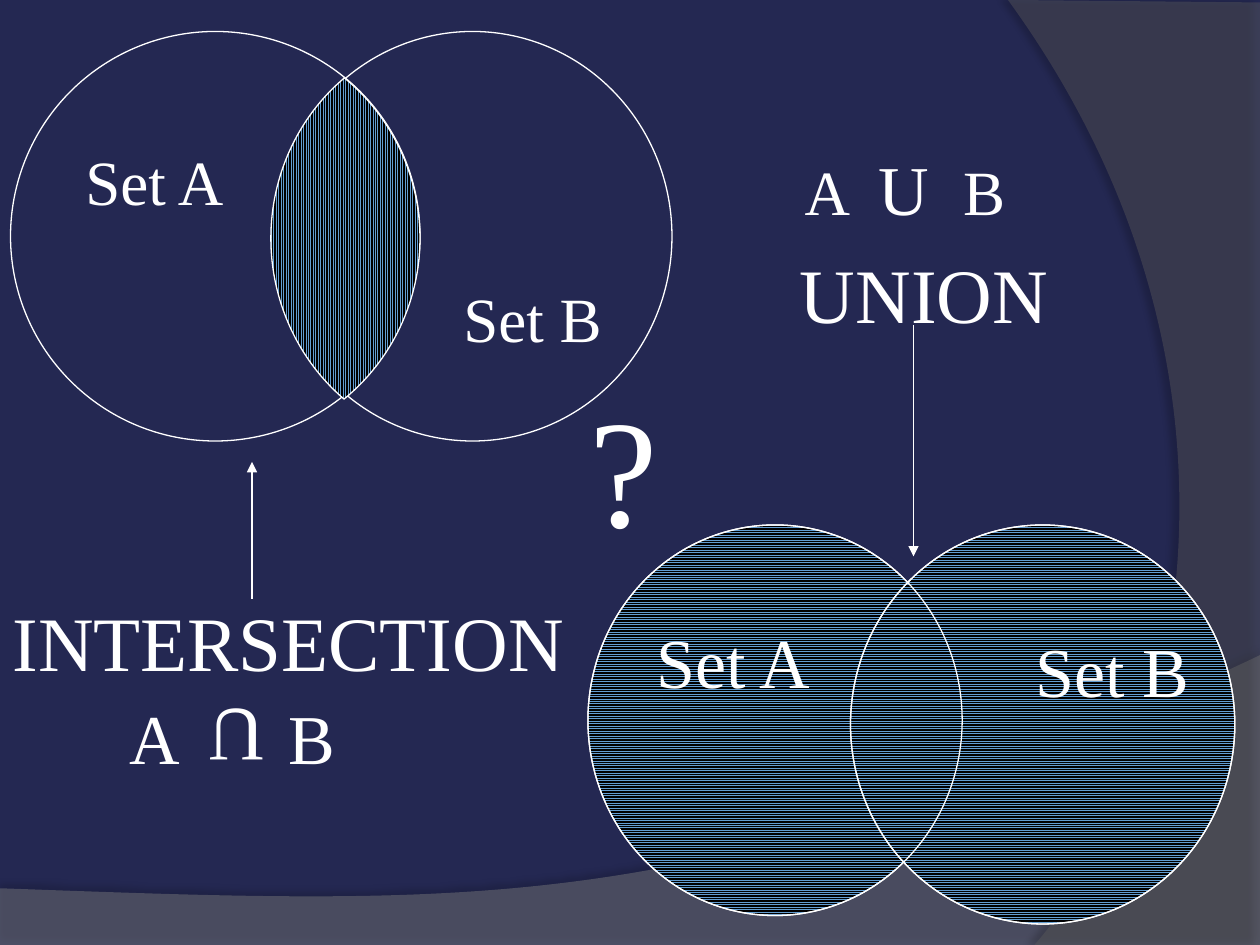
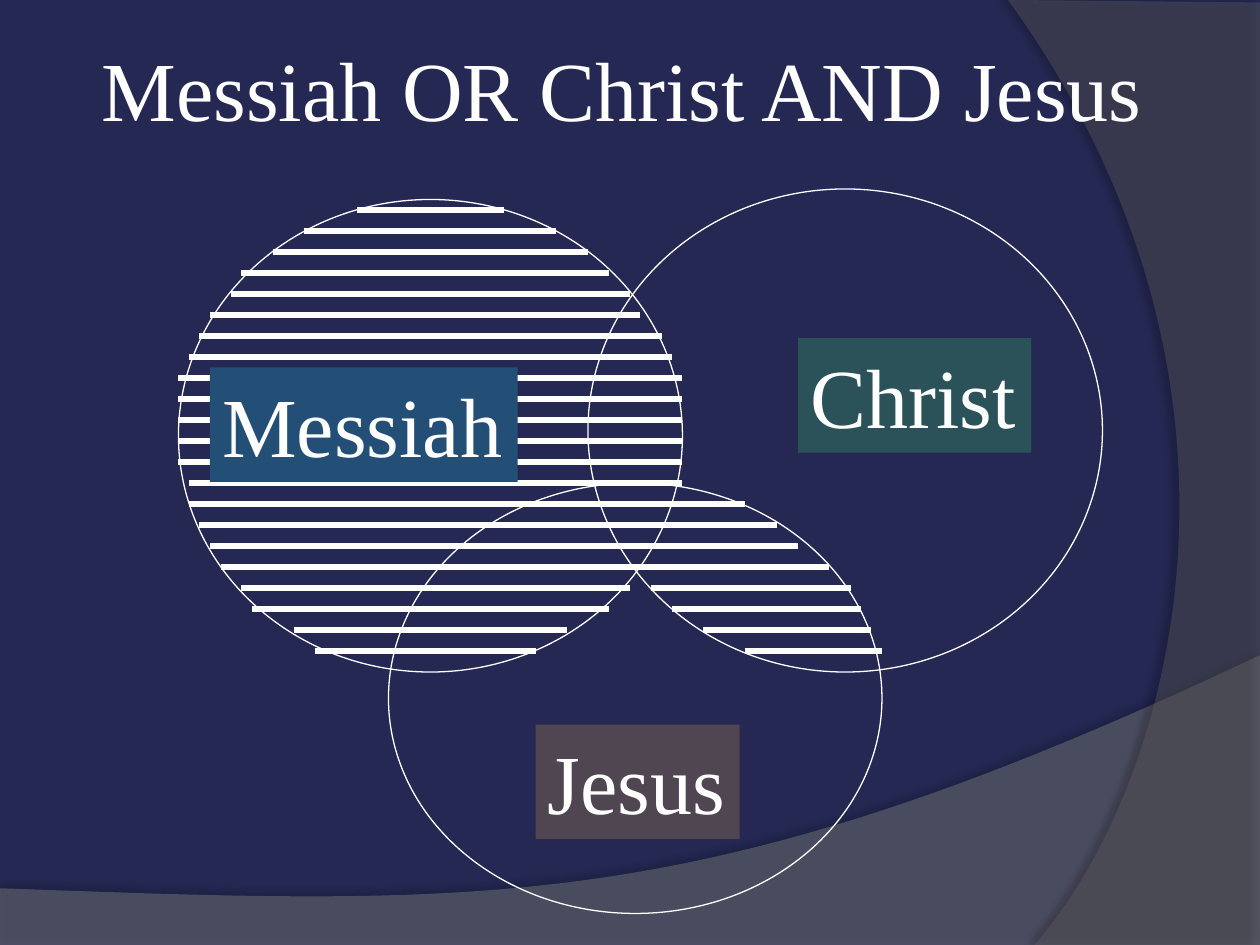
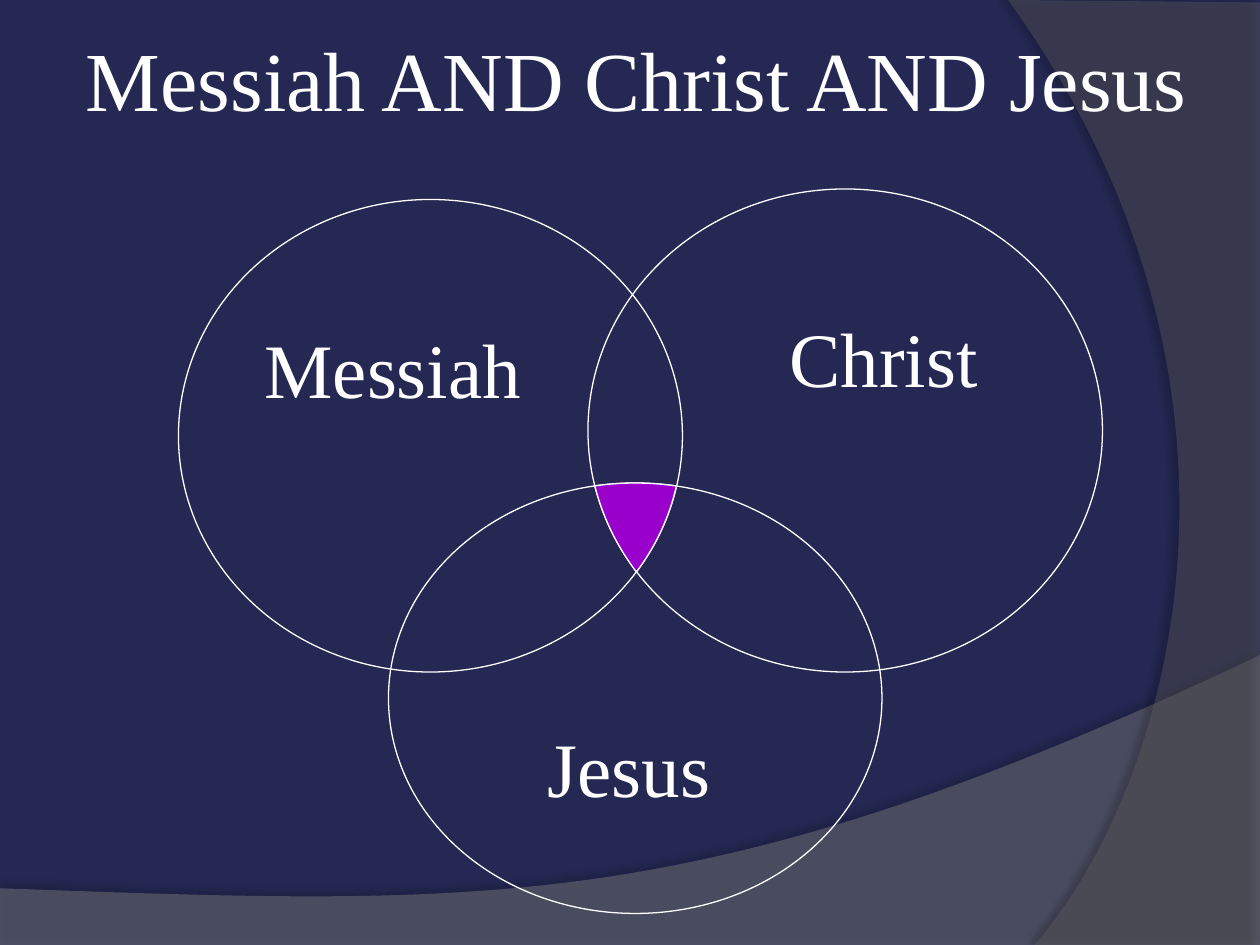
from dataclasses import dataclass
from math import cos, radians, sin, tan
from typing import NamedTuple

from lxml.etree import SubElement
from pptx import Presentation
from pptx.dml.color import RGBColor
from pptx.enum.dml import MSO_PATTERN
from pptx.enum.shapes import MSO_CONNECTOR, MSO_SHAPE
from pptx.enum.text import MSO_ANCHOR, MSO_AUTO_SIZE, PP_ALIGN
from pptx.oxml.ns import qn
from pptx.util import Inches, Pt

STRAIGHT = MSO_CONNECTOR.STRAIGHT
ELLIPSE, RECT = MSO_SHAPE.OVAL, MSO_SHAPE.RECTANGLE
ROWS, COLS = MSO_PATTERN.LIGHT_HORIZONTAL, MSO_PATTERN.LIGHT_VERTICAL
LEFT, CENTER = PP_ALIGN.LEFT, PP_ALIGN.CENTER
TOP, MIDDLE = MSO_ANCHOR.TOP, MSO_ANCHOR.MIDDLE
GROW = MSO_AUTO_SIZE.SHAPE_TO_FIT_TEXT

# The grid has twelve cells to the inch.
CELL = Inches(1) // 12
WIDE, HIGH = 120, 90

Point = tuple[float, float]


@dataclass(frozen=True)
class Theme:
    font: str = "Times New Roman"
    back: RGBColor = RGBColor.from_string("242852")
    ink: RGBColor = RGBColor.from_string("FFFFFF")
    hatch: RGBColor = RGBColor.from_string("629DD1")
    dark: RGBColor = RGBColor.from_string("000000")
    floor: RGBColor = RGBColor.from_string("7F7F7F")
    side: RGBColor = RGBColor.from_string("5E5E5E")
    blue: RGBColor = RGBColor.from_string("234F77")
    green: RGBColor = RGBColor.from_string("2B5259")
    mauve: RGBColor = RGBColor.from_string("504652")
    core: RGBColor = RGBColor.from_string("9900CC")
    small: int = 36
    medium: int = 40
    large: int = 44
    title: int = 48
    huge: int = 88
    thin: float = 0.75
    thick: float = 3


THEME = Theme()


class Curve(NamedTuple):
    start: Point
    first: Point
    second: Point
    end: Point


class Oval(NamedTuple):
    left: float
    top: float
    width: float
    height: float

    def arc(self, start: float, end: float) -> Curve:
        """Cubic curve along the border between two angles in degrees."""
        a, b = radians(start), radians(end)
        pull = 4 / 3 * tan((b - a) / 4)
        spots = ((cos(a), sin(a)),
                 (cos(a) - pull * sin(a), sin(a) + pull * cos(a)),
                 (cos(b) + pull * sin(b), sin(b) - pull * cos(b)),
                 (cos(b), sin(b)))
        return Curve(*((self.left + self.width / 2 * (1 + x),
                        self.top + self.height / 2 * (1 + y)) for x, y in spots))


class Band(NamedTuple):
    curve: Curve
    corners: list[Point]
    color: RGBColor
    alpha: int
    shade: int
    gap: float
    angle: int


@dataclass(frozen=True)
class Label:
    text: str
    left: float
    top: float
    width: float
    height: float
    size: int = THEME.large
    fill: RGBColor | None = None
    wrap: bool = True
    align: PP_ALIGN = LEFT
    anchor: MSO_ANCHOR = TOP
    turn: int = 0


BANDS = [
    Band(Curve((WIDE, 62.4), (67.08, 87.48), (46.92, 86.28), (0, 84.6)),
         [(0, HIGH), (WIDE, HIGH)], THEME.floor, 45, 35, 3.5, 270),
    Band(Curve((98.52, HIGH), (112.2, 74.28), (122.16, 36), (96, 0)),
         [(WIDE, 0.24), (WIDE, HIGH)], THEME.side, 40, 45, 4, 180),
]

MEET = [Oval(26, 3, 38, 39), Oval(1, 3, 39, 39)]
JOIN = [Oval(56, 50, 35.64, 37.2), Oval(81, 50, 36.6, 38)]
TERMS = MESSIAH, CHRIST, JESUS = [
    Oval(17, 19, 48, 45), Oval(56, 18, 49, 46), Oval(37, 46, 47, 41)]

BULGE_A, BULGE_B = Oval(1, 3, 39, 39.4), Oval(25.8, 3, 38, 39.4)
LENS = [BULGE_A.arc(-51, 0), BULGE_A.arc(0, 51),
        BULGE_B.arc(129, 180), BULGE_B.arc(180, 231)]
CORE = [JESUS.arc(260.8, 270), JESUS.arc(270, 279.6),
        MESSIAH.arc(12.4, 35.2), CHRIST.arc(144.2, 166.7)]

JOIN_TEXT = [
    Label("Set A", 61.15, 58.3, 17.4, 9.2, THEME.medium, None, False, CENTER, MIDDLE),
    Label("Set B", 97.45, 59.2, 17, 9.2, THEME.medium, None, False, CENTER, MIDDLE),
]
SET_TEXT = [
    Label("UNION", 75, 22.9, 29, 10),
    Label("INTERSECTION", 0, 56, 56, 10),
    Label("?", 55, 35, 11, 19, THEME.huge),
    Label("Set A", 6.95, 13, 18, 8.4, THEME.small),
    Label("Set B", 42.95, 26, 16, 8.4, THEME.small),
    Label("U", 18.4, 65.5, 8, 10, turn=180),
    Label("A", 11.2, 65.55, 6.7, 9.2, THEME.medium),
    Label("B", 26.3, 65.55, 10.7, 9.2, THEME.medium),
]
OR_TEXT = [
    Label("Messiah", 20, 35, 29.3, 10.9, THEME.title, THEME.blue, False),
    Label("Christ", 76, 32.2, 22.2, 10.9, THEME.title, THEME.green, False),
    Label("Jesus", 51, 69, 19.45, 10.9, THEME.title, THEME.mauve, False),
    Label("Messiah OR Christ AND Jesus", 8.5, 3, 103, 10.9, THEME.title),
]
AND_TEXT = [
    Label("Messiah", 24, 30, 28, 10),
    Label("Christ", 74, 29, 25, 10),
    Label("Jesus", 51, 68, 19, 10),
    Label("Messiah AND Christ AND Jesus", 7, 2, 108.2, 10.9, THEME.title, wrap=False),
]

# First and last column of each stripe, one stripe every second row.
RIGHT_TOP, RIGHT = 48, [(57, 71), (58, 74), (59, 76), (60, 79),
                        (62, 81), (64, 82), (67, 83), (71, 84)]
LEFT_TOP, DISC = 20, [
    (34, 48), (29, 53), (26, 56), (23, 58), (22, 60), (20, 61), (19, 63), (18, 64),
    *[(17, 65)] * 5,
    (18, 65), (18, 64), (19, 63), (20, 62), (21, 61), (23, 60), (24, 58), (28, 54),
    (30, 51)]


def grid(*cells: float) -> list[int]:
    return [round(cell * CELL) for cell in cells]


def paint(shape, color=None, pattern=None, edge: bool = True) -> None:
    shape.shadow.inherit = False
    fill = shape.fill
    if pattern is not None:
        fill.patterned()
        fill.pattern = pattern
        fill.fore_color.rgb, fill.back_color.rgb = THEME.hatch, THEME.dark
    elif color is not None:
        fill.solid()
        fill.fore_color.rgb = color
    else:
        fill.background()
    if edge:
        shape.line.color.rgb = THEME.ink
        shape.line.width = Pt(THEME.thin)
    else:
        shape.line.fill.background()


def outline(slide, curves: list[Curve], corners: tuple[Point, ...] | list[Point] = ()):
    """Closed outline of joined curves, then straight lines through the corners."""
    spots = [grid(*spot) for spot in [curve.end for curve in curves] + list(corners)]
    pen = slide.shapes.build_freeform(*grid(*curves[0].start))
    pen.add_line_segments(spots, close=True)
    shape = pen.convert_to_shape()
    legs = list(shape.element.iter(qn("a:lnTo")))
    for leg, curve in zip(legs, curves):
        leg.tag = qn("a:cubicBezTo")
        for index, pull in enumerate((curve.first, curve.second)):
            x, y = grid(*pull)
            spot = SubElement(leg, qn("a:pt"), x=str(x - shape.left), y=str(y - shape.top))
            leg.insert(index, spot)
    return shape


def add_band(deck, slide, band: Band) -> None:
    """Draw a band on the slide and move it to the master."""
    shape = outline(slide, [band.curve], band.corners)
    paint(shape, band.color, edge=False)
    node = shape.element
    tint = node.find(".//" + qn("a:srgbClr"))
    SubElement(tint, qn("a:alpha"), val=str(band.alpha * 1000))
    cast = SubElement(node.find(".//" + qn("a:effectLst")), qn("a:outerShdw"),
                      blurRad=str(Pt(4)), dist=str(Pt(band.gap)),
                      dir=str(band.angle * 60000), algn="ctr", rotWithShape="0")
    shade = SubElement(cast, qn("a:srgbClr"), val=str(THEME.dark))
    SubElement(shade, qn("a:alpha"), val=str(band.shade * 1000))
    deck.slide_master.shapes.element.append(node)


def add_ovals(slide, ovals: list[Oval], pattern=None) -> None:
    for oval in ovals:
        paint(slide.shapes.add_shape(ELLIPSE, *grid(*oval)), pattern=pattern)


def add_line(slide, start: Point, end: Point, width: float, arrow: bool = False) -> None:
    line = slide.shapes.add_connector(STRAIGHT, *grid(*start, *end))
    line.line.color.rgb = THEME.ink
    line.line.width = Pt(width)
    if arrow:
        SubElement(line.line._get_or_add_ln(), qn("a:tailEnd"), type="triangle")
    SubElement(line.element.spPr, qn("a:effectLst"))


def add_stripes(slide, top: int, spans: list[tuple[int, int]]) -> None:
    for index, (start, end) in enumerate(spans):
        row = top + 2 * index
        add_line(slide, (start, row), (end, row), THEME.thick)


def style(para, size: int, tabs: tuple[float, ...] = ()) -> None:
    props = para._p.get_or_add_pPr()
    SubElement(SubElement(props, qn("a:spcBef")), qn("a:spcPct"), val="50000")
    if tabs:
        stops = SubElement(props, qn("a:tabLst"))
        for place in grid(*tabs):
            SubElement(stops, qn("a:tab"), pos=str(place), algn="l")
    font = para.font
    font.name, font.size = THEME.font, Pt(size)
    font.color.rgb = THEME.ink


def add_label(slide, label: Label, tabs: tuple[float, ...] = ()):
    place = grid(label.left, label.top, label.width, label.height)
    if label.fill is None:
        shape = slide.shapes.add_textbox(*place)
    else:
        shape = slide.shapes.add_shape(RECT, *place)
        paint(shape, label.fill, edge=False)
    shape.rotation = label.turn
    frame = shape.text_frame
    frame.word_wrap, frame.auto_size = label.wrap, GROW
    frame.vertical_anchor = label.anchor
    para = frame.paragraphs[0]
    para.alignment = label.align
    style(para, label.size, tabs)
    if label.text:
        para.add_run().text = label.text
    return para


def add_labels(slide, labels: list[Label]) -> None:
    for label in labels:
        add_label(slide, label)


def draw_sets(slide) -> None:
    add_ovals(slide, JOIN, ROWS)
    add_labels(slide, JOIN_TEXT)
    para = add_label(slide, Label("", 75.45, 13.3, 23.2, 9.2, THEME.small), (7.05, 15.1))
    for text, size in (("A\t", None), ("U\t", THEME.medium), ("B", None)):
        run = para.add_run()
        run.text = text
        if size:
            run.font.size = Pt(size)
    add_ovals(slide, JOIN)
    add_line(slide, (24, 57), (24, 44), THEME.thin, True)
    add_line(slide, (87, 31), (87, 53), THEME.thin, True)
    add_ovals(slide, MEET)
    paint(outline(slide, LENS), pattern=COLS)
    add_labels(slide, SET_TEXT)


def draw_or(slide) -> None:
    add_stripes(slide, RIGHT_TOP, RIGHT)
    add_stripes(slide, LEFT_TOP, DISC)
    add_ovals(slide, TERMS)
    add_labels(slide, OR_TEXT)


def draw_and(slide) -> None:
    add_ovals(slide, TERMS)
    add_labels(slide, AND_TEXT)
    paint(outline(slide, CORE), THEME.core)


def main() -> None:
    deck = Presentation()
    deck.slide_width, deck.slide_height = grid(WIDE, HIGH)
    blank = deck.slide_layouts[6]
    back = deck.slide_master.background.fill
    back.solid()
    back.fore_color.rgb = THEME.back
    slides = [deck.slides.add_slide(blank) for _ in range(3)]
    for band in BANDS:
        add_band(deck, slides[0], band)
    for slide, draw in zip(slides, (draw_sets, draw_or, draw_and)):
        draw(slide)
    deck.save("out.pptx")


if __name__ == "__main__":
    main()
